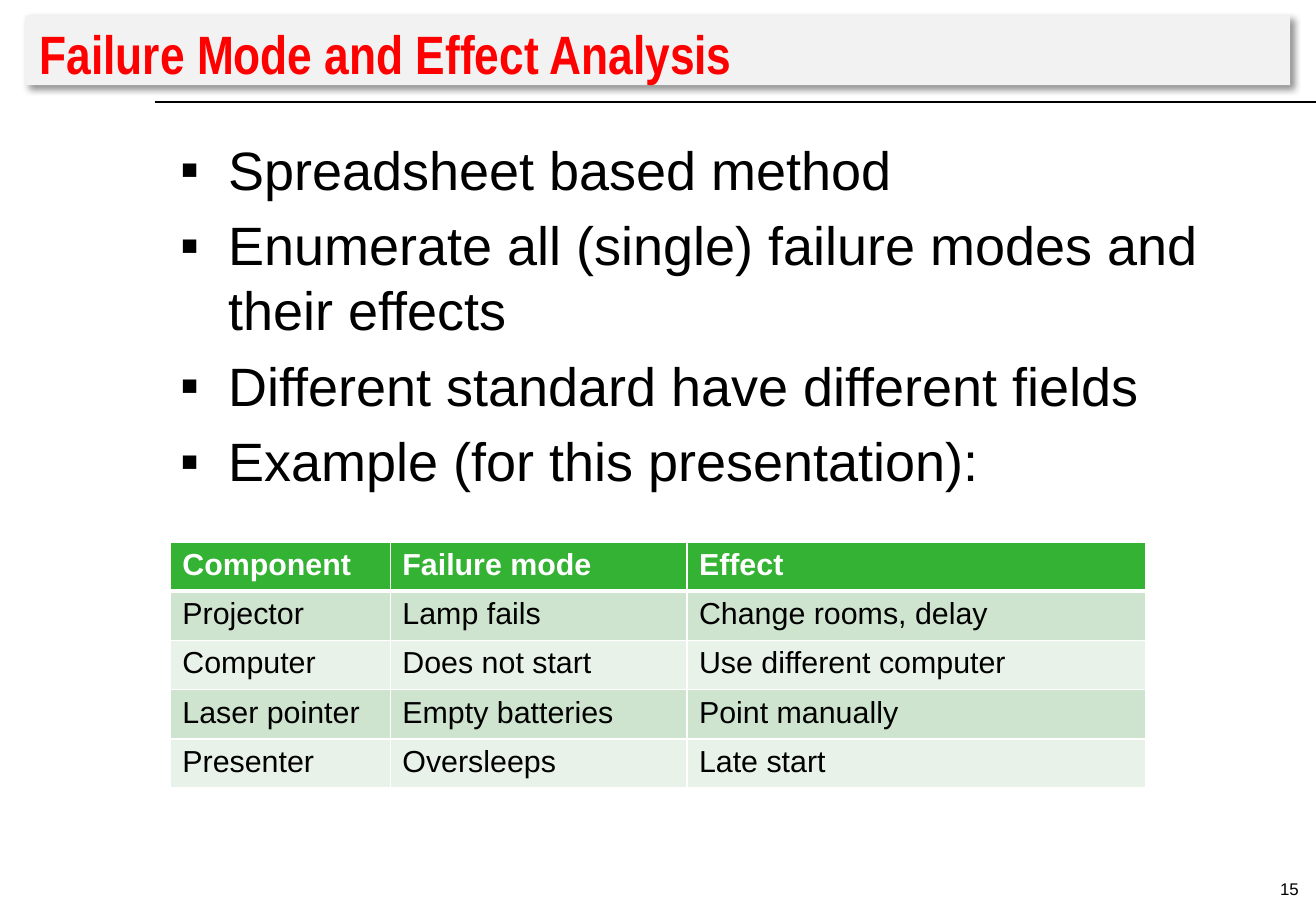
from lxml import etree
from pptx import Presentation
from pptx import util as u
from pptx.dml.color import RGBColor
from pptx.enum import shapes, text
from pptx.oxml import ns, parse_xml

COLOURS = {
    "ink": "000000", "paper": "FFFFFF", "title": "FF0000", "banner": "F2F2F2",
    "header": "34B233", "odd": "CEE4CE", "even": "E8F2E8",
}
POINTS = [
    "Spreadsheet based method",
    "Enumerate all (single) failure modes and their effects",
    "Different standard have different fields",
    "Example (for this presentation):",
]
FAILURES = [
    ("Component", "Failure mode", "Effect"),
    ("Projector", "Lamp fails", "Change rooms, delay"),
    ("Computer", "Does not start", "Use different computer"),
    ("Laser pointer", "Empty batteries", "Point manually"),
    ("Presenter", "Oversleeps", "Late start"),
]
COLUMN_WIDTHS = (4.6, 6.2, 9.6)


def rgb(name):
    return RGBColor.from_string(COLOURS[name])


def apply(target, formats):
    for name, value in formats.items():
        setattr(target, name, value)


def style_font(font, size, colour="ink", bold=False, face="Arial"):
    apply(font, {"name": face, "size": u.Pt(size), "bold": bold})
    font.color.rgb = rgb(colour)


def place(part, box):
    apply(part, dict(zip(("left", "top", "width", "height"), map(u.Cm, box))))


def frame_format(frame, anchor, left=0.25, right=0.25, bottom=0.13):
    apply(frame, {
        "word_wrap": True, "auto_size": text.MSO_AUTO_SIZE.NONE,
        "vertical_anchor": anchor, "margin_left": u.Cm(left),
        "margin_top": u.Cm(0.13), "margin_right": u.Cm(right),
        "margin_bottom": u.Cm(bottom),
    })


def add_banner(slide, box):
    title = slide.shapes.title
    place(title, box)
    title.fill.solid()
    title.fill.fore_color.rgb = rgb("banner")
    title.line.fill.background()
    title.element.spPr.append(parse_xml(
        f'<a:effectLst {ns.nsdecls("a")}>'
        f'<a:outerShdw blurRad="{u.Pt(4)}" dist="{u.Pt(3)}" dir="2700000" '
        f'algn="tl" rotWithShape="0"><a:srgbClr val="{COLOURS["ink"]}">'
        '<a:alpha val="43000"/></a:srgbClr></a:outerShdw></a:effectLst>'))
    frame = title.text_frame
    frame_format(frame, text.MSO_ANCHOR.BOTTOM, left=0.3, bottom=0)
    heading = frame.paragraphs[0]
    heading.text = "Failure Mode and Effect Analysis"
    heading.alignment = text.PP_ALIGN.LEFT
    style_font(heading.runs[0].font, 32, "title", True, "Arial Narrow")


def add_rule(slide, box):
    left, top, width, height = map(u.Cm, box)
    rule = slide.shapes.add_connector(
        shapes.MSO_CONNECTOR.STRAIGHT, left, top, left + width, top + height)
    rule.line.width = u.Pt(1)
    rule.line.color.rgb = rgb("ink")
    etree.SubElement(rule.element.spPr, ns.qn("a:effectLst"))


def add_points(slide, box):
    frame = slide.shapes.add_textbox(*map(u.Cm, box)).text_frame
    frame_format(frame, text.MSO_ANCHOR.TOP, left=0.3)
    for index, wording in enumerate(POINTS):
        point = frame.paragraphs[0] if index == 0 else frame.add_paragraph()
        point.text = wording
        properties = point._p.get_or_add_pPr()
        properties.set("marL", str(u.Cm(1)))
        properties.set("indent", str(-u.Cm(1)))
        etree.SubElement(properties, ns.qn("a:buFont"), typeface="Arial")
        etree.SubElement(properties, ns.qn("a:buChar"), char="▪")
        if index:
            point.space_before = u.Pt(6.4)
        style_font(point.runs[0].font, 32)


def set_borders(cell, widths):
    properties = cell._tc.get_or_add_tcPr()
    for side, width in zip("LRTB", widths):
        properties.append(parse_xml(
            f'<a:ln{side} {ns.nsdecls("a")} w="{u.Pt(width)}"><a:solidFill>'
            f'<a:srgbClr val="{COLOURS["paper"]}"/></a:solidFill></a:ln{side}>'))


def add_failures(slide, box):
    table = slide.shapes.add_table(
        len(FAILURES), len(COLUMN_WIDTHS), *map(u.Cm, box)).table
    for column, width in zip(table.columns, COLUMN_WIDTHS):
        column.width = u.Cm(width)
    for row, entries in enumerate(FAILURES):
        band = "header" if row == 0 else ("even", "odd")[row % 2]
        for column, entry in enumerate(entries):
            cell = table.cell(row, column)
            set_borders(cell, (1, 1, 3 if row == 1 else 1, 3 if row == 0 else 1))
            cell.fill.solid()
            cell.fill.fore_color.rgb = rgb(band)
            cell.text = entry
            style_font(cell.text_frame.paragraphs[0].runs[0].font, 18,
                       "paper" if row == 0 else "ink", row == 0)


def add_page_number(slide, box):
    frame = slide.shapes.add_textbox(*map(u.Cm, box)).text_frame
    frame_format(frame, text.MSO_ANCHOR.TOP, right=0)
    number = frame.paragraphs[0]
    number.text = "15"
    apply(number, {"alignment": text.PP_ALIGN.RIGHT, "line_spacing": u.Pt(15)})
    style_font(number.runs[0].font, 10)


def main():
    deck = Presentation()
    apply(deck, {"slide_width": u.Cm(27.51), "slide_height": u.Cm(19.05)})
    slide = deck.slides.add_slide(deck.slide_layouts[5])
    add_banner(slide, (0.53, 0.32, 26.44, 1.46))
    add_rule(slide, (3.25, 2.13, 24.26, 0))
    add_points(slide, (3.48, 2.72, 23.47, 8))
    add_failures(slide, (3.56, 11.33, sum(COLUMN_WIDTHS), 5.15))
    add_page_number(slide, (25.25, 18.14, 1.9, 0.9))
    deck.save("out.pptx")


if __name__ == "__main__":
    main()
